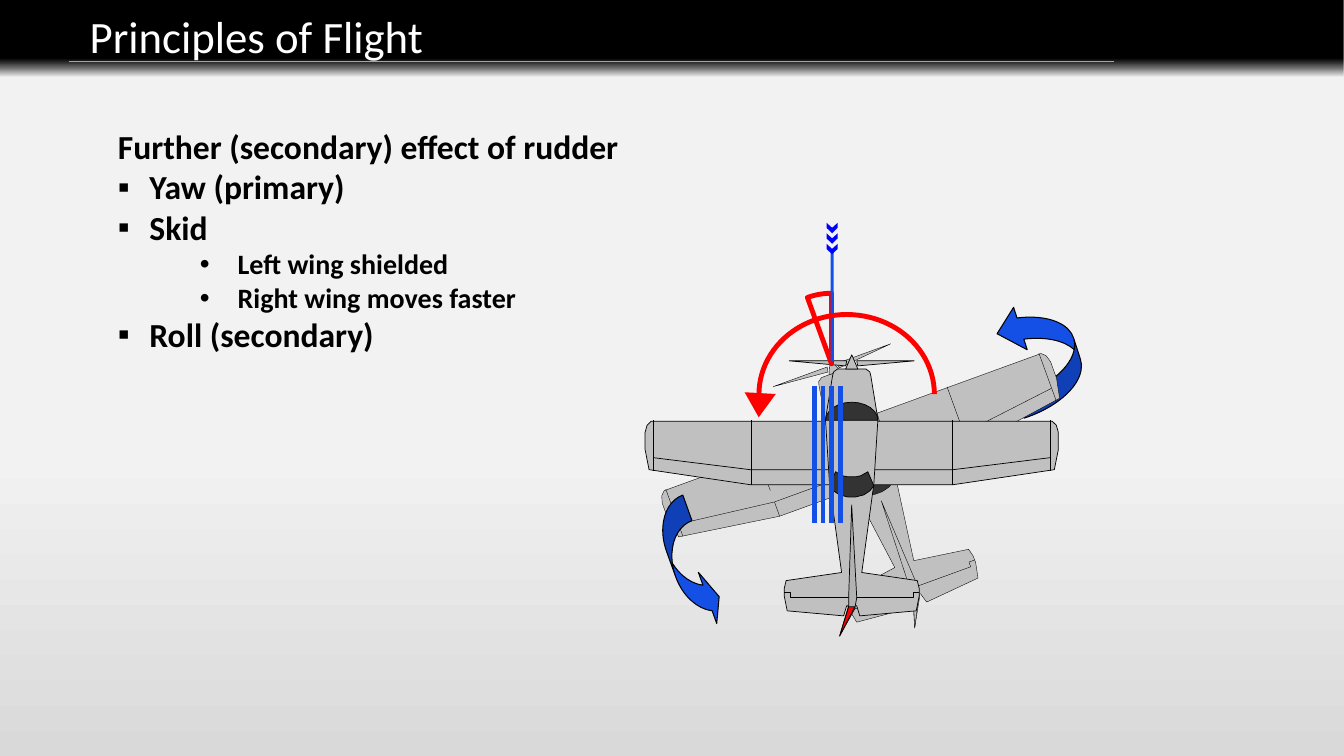
"""Build the slide on the further effect of rudder, with one aircraft model drawn in two attitudes."""
from dataclasses import dataclass
from math import cos, radians, sin

from lxml import etree
from pptx import Presentation
from pptx.dml.color import RGBColor
from pptx.enum.shapes import MSO_CONNECTOR, MSO_SHAPE
from pptx.enum.text import MSO_ANCHOR, MSO_AUTO_SIZE, PP_ALIGN
from pptx.oxml.ns import qn
from pptx.util import Pt

STRAIGHT = MSO_CONNECTOR.STRAIGHT
ARC, RECTANGLE, TRIANGLE = MSO_SHAPE.ARC, MSO_SHAPE.RECTANGLE, MSO_SHAPE.ISOSCELES_TRIANGLE
CURVED_ARROW = MSO_SHAPE.CURVED_UP_ARROW
TOP, LEFT, NO_AUTOFIT = MSO_ANCHOR.TOP, PP_ALIGN.LEFT, MSO_AUTO_SIZE.NONE
BULLETS = {"square": ("▪", 22.5, -22.5), "round": ("•", 85.5, -27), None: (None, 0, 0)}
BANK_ANGLE = 20
MODEL_SCALE = 0.72


@dataclass(frozen=True)
class Theme:
    font: str = "Calibri"
    title_size: float = 32
    list_size: float = 24
    detail_size: float = 20
    ink: str = "000000"
    paper: str = "FFFFFF"
    rule: str = "A6A6A6"
    body: str = "C0C0C0"
    fin: str = "B2B2B2"
    glass: str = "333333"
    red: str = "FF0000"
    blue: str = "1450E6"
    chevron: str = "0000FF"
    background: tuple = ((0, "F2F2F2", 100), (60, "F2F2F2", 100), (100, "D9D9D9", 100))
    band: tuple = ((0, "000000", 100), (76, "000000", 100), (88, "000000", 55), (100, "000000", 0))


THEME = Theme()


@dataclass(frozen=True)
class Attitude:
    center: tuple
    bank: float
    line_width: float
    fin: str
    rudder: str
    crease: str = None

    def place(self, points):
        turn_cos, turn_sin = cos(radians(self.bank)), sin(radians(self.bank))
        center_x, center_y = self.center
        return [(center_x + MODEL_SCALE * (x * turn_cos + y * turn_sin),
                 center_y + MODEL_SCALE * (y * turn_cos - x * turn_sin)) for x, y in points]


def mirrored(right_half):
    return right_half + [(-x, y) for x, y in reversed(right_half)]


def arc_points(center, radius_x, radius_y, start, end, steps=12):
    angles = [radians(start + (end - start) * step / steps) for step in range(steps + 1)]
    return [(center[0] + radius_x * cos(angle), center[1] - radius_y * sin(angle)) for angle in angles]


class SlideBuilder:
    def __init__(self, slide, theme):
        self.slide, self.shapes, self.theme = slide, slide.shapes, theme

    def paint(self, shape, fill=None, line=None, width=0.75):
        shape.shadow.inherit = False
        if fill:
            shape.fill.solid()
            shape.fill.fore_color.rgb = RGBColor.from_string(fill)
        else:
            shape.fill.background()
        if line:
            self.stroke(shape, line, width)
        else:
            shape.line.fill.background()

    def stroke(self, shape, color, width):
        shape.line.color.rgb = RGBColor.from_string(color)
        shape.line.width = Pt(width)

    def gradient(self, fill, element, stops):
        fill.gradient()
        fill.gradient_angle = 270
        stop_list = next(element.iter(qn("a:gsLst")))
        stop_list.clear()
        for position, color, opacity in stops:
            stop = etree.SubElement(stop_list, qn("a:gs"), pos=str(position * 1000))
            tint = etree.SubElement(stop, qn("a:srgbClr"), val=color)
            if opacity < 100:
                etree.SubElement(tint, qn("a:alpha"), val=str(opacity * 1000))

    def background(self):
        self.gradient(self.slide.background.fill, self.slide.element, self.theme.background)

    def band(self, width, height):
        band = self.preset(RECTANGLE, (0, 0, width, height))
        self.gradient(band.fill, band.element, self.theme.band)
        self.shapes.element.insert(2, band.element)

    def preset(self, kind, box, rotation=0, adjustments=(), **style):
        shape = self.shapes.add_shape(kind, *map(Pt, box))
        shape.rotation = rotation
        for index, value in enumerate(adjustments):
            shape.adjustments[index] = value
        self.paint(shape, **style)
        return shape

    def outline(self, points, closed=True, **style):
        corners = [(Pt(x), Pt(y)) for x, y in points]
        builder = self.shapes.build_freeform(*corners[0])
        builder.add_line_segments(corners[1:], close=closed)
        self.paint(builder.convert_to_shape(), **style)

    def line(self, start, end, color, width):
        connector = self.shapes.add_connector(STRAIGHT, *map(Pt, (*start, *end)))
        self.stroke(connector, color, width)
        etree.SubElement(connector.element.spPr, qn("a:effectLst"))

    def aircraft(self, attitude):
        theme = self.theme

        def part(points, fill=theme.body, closed=True):
            self.outline(attitude.place(points), closed, fill=fill, line=theme.ink,
                         width=attitude.line_width)

        wing = [(199, -12), (203, -8), (205, -1), (205, 16), (201, 36), (100, 51)]
        wing_crease = [(197, 24), (100, 36)]
        nose = [(14, -64), (18, -61), (19, -57)]
        cabin = [(26, -14), (22, 50), (10, 138)]
        tailplane = [(65, 146), (67, 154), (67, 161), (64, 176), (8, 181), (5, 171)]
        spinner = [(0, -78), (6, -64)]
        elevator_crease = [(67, 158), (61, 158), (61, 163)]
        fin = [(0, 71), (5, 163), (3, 174), (-12, 201), (-3, 171), (-3, 163)]
        rudder = [(-3, 172), (3, 172), (-12, 201)]
        windscreen = arc_points((0, -13), 26, 18, 0, 180)
        blade = [(5, -72), (62, -72), (6, -67)]
        rear_window = [(4, 43), (9, 42), (16, 38), (22, 52), (18, 57), (12, 61), (4, 63)]

        part(mirrored(wing))
        for rib_x, rib_end in ((100, 51), (197, 37)):
            for side in (-1, 1):
                rib = attitude.place([(side * rib_x, -13), (side * rib_x, rib_end)])
                self.line(*rib, theme.ink, attitude.line_width)
        part(mirrored(wing_crease), attitude.crease, closed=False)
        part(mirrored(nose + cabin + tailplane))
        part(mirrored(spinner))
        part(mirrored(elevator_crease), None, closed=False)
        part(fin, attitude.fin)
        part(windscreen, theme.glass)
        for side in (-1, 1):
            part([(side * x, y) for x, y in blade])
        part(mirrored(rear_window), theme.glass)
        part(rudder, attitude.rudder)

    def text(self, placeholder, box, paragraphs, color, bold):
        placeholder.left, placeholder.top, placeholder.width, placeholder.height = map(Pt, box)
        frame = placeholder.text_frame
        frame.word_wrap, frame.auto_size, frame.vertical_anchor = True, NO_AUTOFIT, TOP
        for index, (wording, size, bullet) in enumerate(paragraphs):
            paragraph = frame.add_paragraph() if index else frame.paragraphs[0]
            paragraph.alignment, paragraph.space_before = LEFT, Pt(0)
            paragraph.level = 1 if bullet == "round" else 0
            run = paragraph.add_run()
            run.text = wording
            run.font.name, run.font.size, run.font.bold = self.theme.font, Pt(size), bold
            run.font.color.rgb = RGBColor.from_string(color)
            symbol, margin, indent = BULLETS[bullet]
            properties = paragraph._p.get_or_add_pPr()
            properties.set("marL", str(Pt(margin)))
            properties.set("indent", str(Pt(indent)))
            if symbol:
                etree.SubElement(properties, qn("a:buFont"), typeface="Arial")
                etree.SubElement(properties, qn("a:buChar"), char=symbol)
            else:
                etree.SubElement(properties, qn("a:buNone"))


def main():
    deck = Presentation()
    deck.slide_width, deck.slide_height = Pt(960), Pt(540)
    slide = deck.slides.add_slide(deck.slide_layouts[1])
    page = SlideBuilder(slide, THEME)
    page.background()
    page.band(960, 54.72)
    page.text(slide.shapes.title, (56.88, 2.88, 738.72, 46.08),
              [("Principles of Flight", THEME.title_size, None)], THEME.paper, False)
    page.line((48.96, 43.92), (795.6, 43.92), THEME.rule, 0.75)
    page.text(slide.placeholders[1], (77.04, 86.4, 623.52, 172.08), [
        ("Further (secondary) effect of rudder", THEME.list_size, None),
        ("Yaw (primary)", THEME.list_size, "square"),
        ("Skid", THEME.list_size, "square"),
        ("Left wing shielded", THEME.detail_size, "round"),
        ("Right wing moves faster", THEME.detail_size, "round"),
        ("Roll (secondary)", THEME.list_size, "square"),
    ], THEME.ink, True)

    page.preset(CURVED_ARROW, (704.16, 227.52, 79.2, 51.12), 252.2, (0.311, 0.623, 0.333),
                fill=THEME.blue, line=THEME.ink)
    page.aircraft(Attitude((612, 309.6), BANK_ANGLE, 0.25, THEME.body, THEME.body, THEME.body))
    page.aircraft(Attitude((608.4, 309.6), 0, 0.5, THEME.fin, THEME.red))

    yaw_apex = (594, 259.92)
    page.outline([yaw_apex] + arc_points(yaw_apex, 50.4, 50.4, 90 + BANK_ANGLE, 90),
                 line=THEME.red, width=3.5)
    page.preset(RECTANGLE, (593.28, 179.28, 2.16, 78.48), fill=THEME.blue)
    chevron = [(-4, 0), (0, 3.6), (4, 0), (4, 3.6), (0, 7.5), (-4, 3.6)]
    for row in range(3):
        page.outline([(594.4 + x, 159.12 + 7.5 * row + y) for x, y in chevron], fill=THEME.chevron)
    for streamline in range(4):
        x = 581.76 + 6.12 * streamline
        page.line((x, 275.76), (x, 373.68), THEME.blue, 3.5)

    page.preset(ARC, (542.16, 224.64, 125.28, 113.76), adjustments=(108, 0), line=THEME.red, width=3.5)
    page.preset(TRIANGLE, (531.36, 280.8, 22.32, 17.28), 183.2, (0.504,), fill=THEME.red)
    page.preset(CURVED_ARROW, (444.24, 390.96, 96.48, 24.48), 70.3, (0.793, 1.586, 0.333),
                fill=THEME.blue, line=THEME.ink)
    deck.save("out.pptx")


if __name__ == "__main__":
    main()
